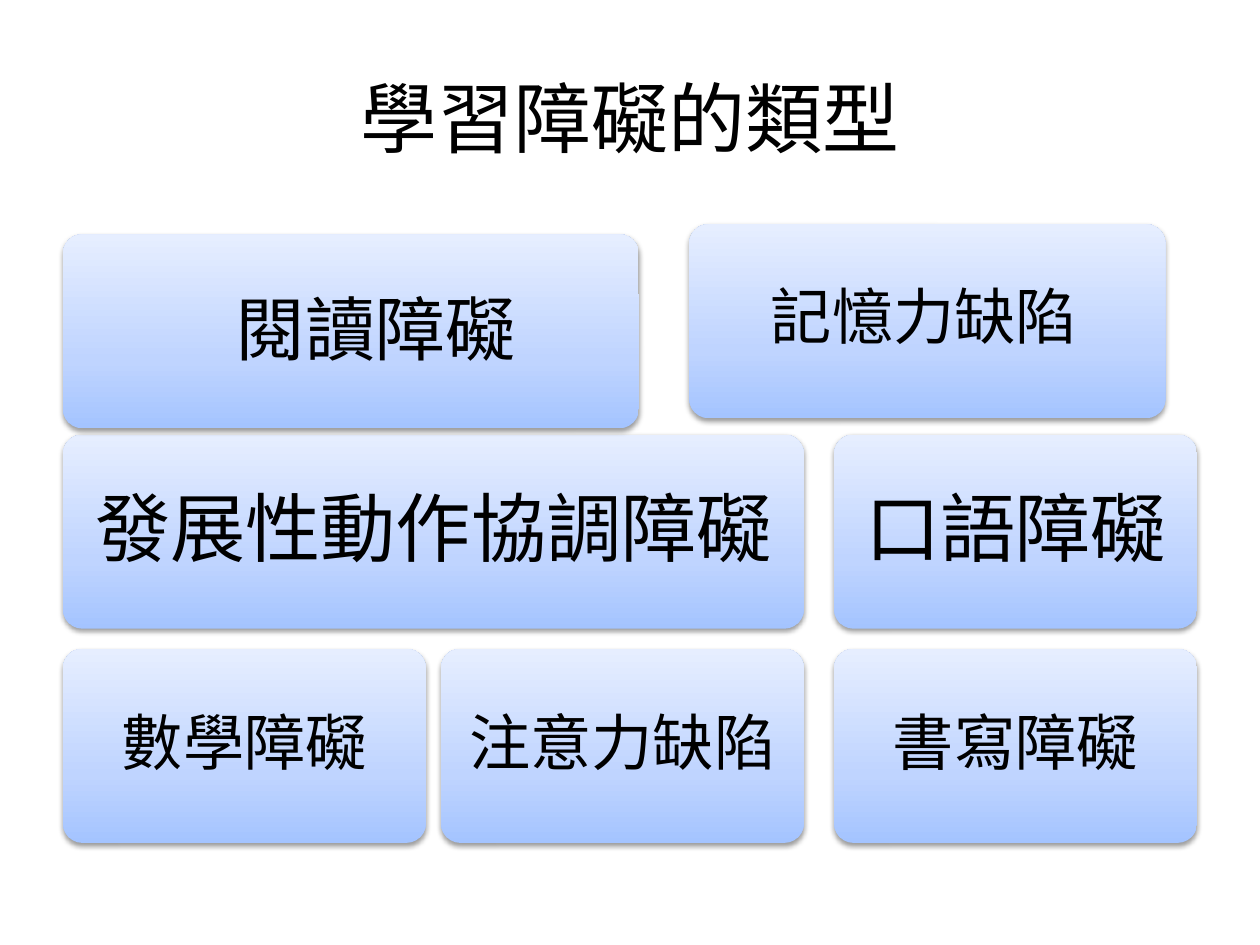
from pptx import Presentation
from pptx.dml.color import RGBColor
from pptx.enum.shapes import MSO_SHAPE as Shape
from pptx.enum.text import MSO_ANCHOR as Anchor, MSO_AUTO_SIZE as Fit, PP_ALIGN as Align
from pptx.oxml import parse_xml
from pptx.oxml.ns import nsdecls
from pptx.util import Inches, Pt

STOPS = ((0, "A4C4FF"), (35, "BFD4FF"), (100, "E6EEFF"))
CARD_HEIGHT = 1.54
LEFT, MIDDLE, RIGHT = 0.5, 3.5, 6.62
NARROW, WIDE = 2.88, 5.88
SECOND_ROW, THIRD_ROW = 3.45, 5.15
CENTRED_CARDS = (
    ("發展性動作協調障礙", LEFT, SECOND_ROW, WIDE, 43, 0.18),
    ("口語障礙", RIGHT, SECOND_ROW, NARROW, 43, 0.18),
    ("數學障礙", LEFT, THIRD_ROW, NARROW, 35, 0.15),
    ("注意力缺陷", MIDDLE, THIRD_ROW, NARROW, 35, 0.15),
    ("書寫障礙", RIGHT, THIRD_ROW, NARROW, 35, 0.15),
)
TOP_CARDS = (
    ("記憶力缺陷", (5.47, 1.78, 3.78), (6.02, 2.16, 2.68, 0.69), 35, True),
    ("閱讀障礙", (0.5, 1.86, 4.57), (1.77, 2.22, 2.45, 0.77), 40, False),
)


def set_all(target, formats):
    """Set each named attribute of the target."""
    for name, value in formats.items():
        setattr(target, name, value)


def colour(hex_code):
    """Return the colour for a hex string."""
    return RGBColor.from_string(hex_code)


def add_label(page, box, text, size, font="Calibri", frame_formats=None, para_formats=None):
    """Place one line of black text in the given box."""
    label = page.shapes.add_textbox(*map(Inches, box))
    frame = label.text_frame
    set_all(frame, {"word_wrap": True, **(frame_formats or {})})
    para = frame.paragraphs[0]
    set_all(para, para_formats or {})
    span = para.add_run()
    span.text = text
    set_all(span.font, {"name": font, "size": Pt(size)})
    span.font.color.rgb = colour("000000")


def add_card(page, left, top, width):
    """Place a rounded card with a blue gradient and a soft shadow."""
    card = page.shapes.add_shape(Shape.ROUNDED_RECTANGLE, *map(Inches, (left, top, width, CARD_HEIGHT)))
    card.adjustments[0] = 0.1
    card.line.fill.background()
    card.fill.gradient()
    card.fill.gradient_angle = 90
    stop_list = card.fill.gradient_stops
    properties = card._element.spPr
    gradient = properties.find(".//{*}gsLst")
    for stop in list(gradient):
        gradient.remove(stop)
    for position, hex_code in STOPS:
        gradient.append(parse_xml(
            f'<a:gs {nsdecls("a")} pos="{position * 1000}"><a:srgbClr val="{colour(hex_code)}"/></a:gs>'))
    properties.append(parse_xml(
        f'<a:effectLst {nsdecls("a")}><a:outerShdw blurRad="{Pt(3.1)}" dist="{Pt(1.6)}"'
        f' dir="5400000" rotWithShape="0"><a:srgbClr val="{colour("000000")}">'
        '<a:alpha val="38000"/></a:srgbClr></a:outerShdw></a:effectLst>'))


def add_centred_card(page, text, left, top, width, size, margin):
    """Place a card with its text centred inside it."""
    add_card(page, left, top, width)
    inset = 0.05
    box = (left + inset, top + inset, width - 2 * inset, CARD_HEIGHT - 2 * inset)
    margins = {f"margin_{side}": Inches(margin) for side in ("left", "top", "right", "bottom")}
    add_label(page, box, text, size,
              frame_formats={"vertical_anchor": Anchor.MIDDLE, **margins},
              para_formats={"alignment": Align.CENTER, "line_spacing": 0.9})


def add_title(page, box):
    """Place the slide title in the given box."""
    add_label(page, box, "學習障礙的類型", 44, "Noto Sans CJK SC",
              {"vertical_anchor": Anchor.MIDDLE}, {"alignment": Align.CENTER})


def main():
    """Build the slide and save it."""
    deck = Presentation()
    set_all(deck, {"slide_width": Inches(10), "slide_height": Inches(7.5)})
    page = deck.slides.add_slide(deck.slide_layouts[6])
    add_title(page, (0.5, 0.3, 9, 1.25))
    for card in CENTRED_CARDS:
        add_centred_card(page, *card)
    for text, card, box, size, wrap in TOP_CARDS:
        add_card(page, *card)
        add_label(page, box, text, size,
                  frame_formats={"word_wrap": wrap, "auto_size": Fit.SHAPE_TO_FIT_TEXT})
    deck.save("out.pptx")


if __name__ == "__main__":
    main()
